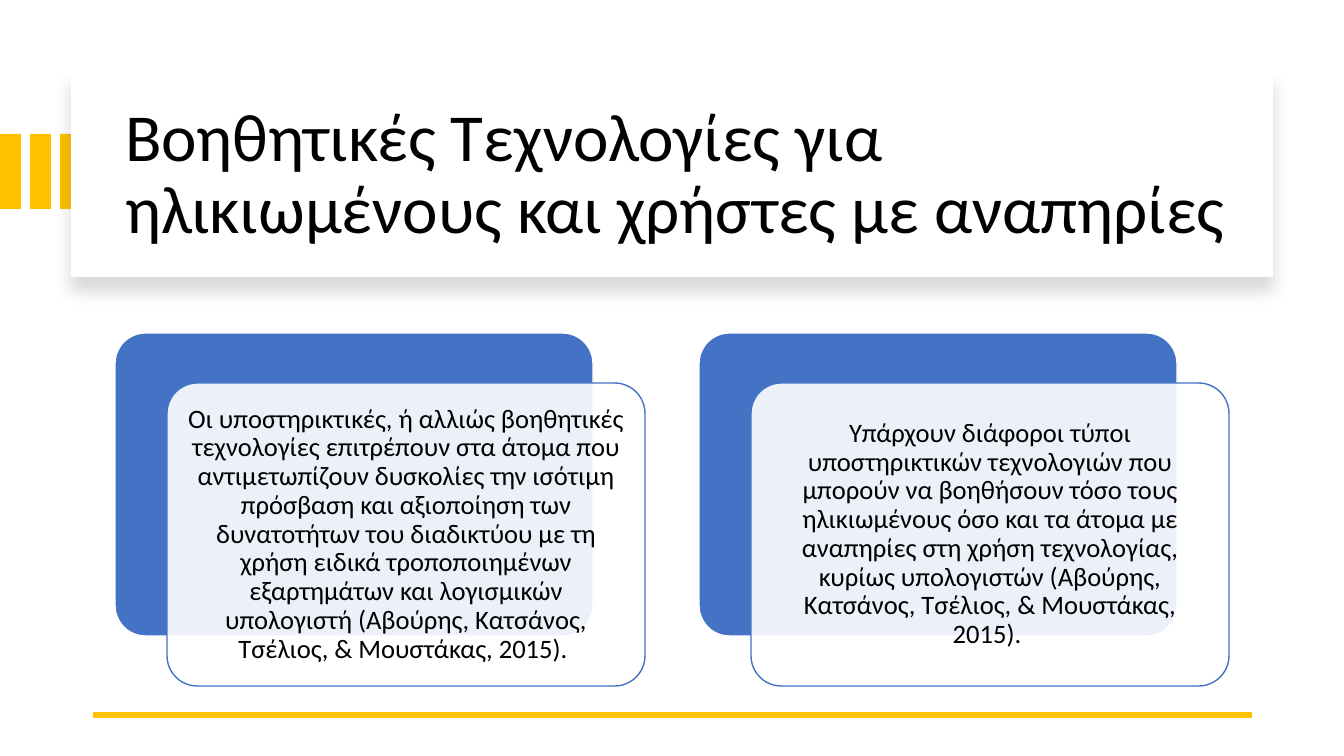
from lxml.etree import SubElement
from pptx import Presentation
from pptx.dml.color import RGBColor
from pptx.enum.shapes import MSO_CONNECTOR, MSO_SHAPE
from pptx.enum.text import MSO_ANCHOR, PP_ALIGN
from pptx.oxml.ns import qn
from pptx.util import Pt

PX = 914400 / 100.8
GOLD = RGBColor(0xFF, 0xC0, 0x00)
BLUE = RGBColor(0x44, 0x72, 0xC4)
WHITE = RGBColor(0xFF, 0xFF, 0xFF)
BLACK = RGBColor(0x00, 0x00, 0x00)

TITLE = "Βοηθητικές Τεχνολογίες για ηλικιωμένους και χρήστες με αναπηρίες"
CARD_TEXTS = [
    "Οι υποστηρικτικές, ή αλλιώς βοηθητικές τεχνολογίες επιτρέπουν στα άτομα που "
    "αντιμετωπίζουν δυσκολίες την ισότιμη πρόσβαση και αξιοποίηση των δυνατοτήτων "
    "του διαδικτύου με τη χρήση ειδικά τροποποιημένων εξαρτημάτων και λογισμικών "
    "υπολογιστή (Αβούρης, Κατσάνος, Τσέλιος, & Μουστάκας, 2015). ",
    "Υπάρχουν διάφοροι τύποι υποστηρικτικών τεχνολογιών που μπορούν να βοηθήσουν "
    "τόσο τους ηλικιωμένους όσο και τα άτομα με αναπηρίες στη χρήση τεχνολογίας, "
    "κυρίως υπολογιστών (Αβούρης, Κατσάνος, Τσέλιος, & Μουστάκας, 2015). ",
]

deck = Presentation()
deck.slide_width, deck.slide_height = round(1344 * PX), round(756 * PX)
page = deck.slides.add_slide(deck.slide_layouts[6])


def add_block(kind, bounds, fill, outline=None):
    block = page.shapes.add_shape(kind, *[round(n * PX) for n in bounds])
    block.shadow.inherit = False
    block.fill.solid()
    block.fill.fore_color.rgb = fill
    if kind == MSO_SHAPE.ROUNDED_RECTANGLE:
        block.adjustments[0] = 0.1
    if outline is None:
        block.line.fill.background()
    else:
        block.line.color.rgb = outline
        block.line.width = Pt(1)
    return block


def add_text(bounds, text, size, align, inset_x, inset_y):
    box = page.shapes.add_textbox(*[round(n * PX) for n in bounds])
    frame = box.text_frame
    frame.word_wrap = True
    frame.vertical_anchor = MSO_ANCHOR.MIDDLE
    frame.margin_left = frame.margin_right = round(inset_x * PX)
    frame.margin_top = frame.margin_bottom = round(inset_y * PX)
    para = frame.paragraphs[0]
    para.alignment = align
    para.line_spacing = 0.9
    span = para.add_run()
    span.text = text
    span.font.name = "Calibri"
    span.font.size = Pt(size)
    span.font.color.rgb = BLACK


# Gold stripes at the left edge
for i in range(3):
    add_block(MSO_SHAPE.RECTANGLE, (i * 30, 134, 21, 75), GOLD)

# Title panel with a soft shadow below it
panel = add_block(MSO_SHAPE.RECTANGLE, (71, 68, 1202, 209), WHITE)
effects = panel._element.spPr.find(qn("a:effectLst"))
shadow = SubElement(effects, qn("a:outerShdw"), blurRad=str(Pt(11)),
                    dist=str(Pt(10)), dir="5400000", algn="t", rotWithShape="0")
shadow_color = SubElement(shadow, qn("a:srgbClr"), val=str(BLACK))
SubElement(shadow_color, qn("a:alpha"), val="15000")
add_text((115, 90, 1122, 171), TITLE, 48, PP_ALIGN.LEFT, 10, 5)

# Gold rule at the bottom
rule = page.shapes.add_connector(
    MSO_CONNECTOR.STRAIGHT, *[round(n * PX) for n in (1252, 715, 93, 715)])
rule.line.color.rgb = GOLD
rule.line.width = Pt(4.5)
SubElement(rule._element.spPr, qn("a:effectLst"))

# Two cards, each a translucent sheet over a blue block
for i, text in enumerate(CARD_TEXTS):
    left, top = 115 + i * 584, 333
    add_block(MSO_SHAPE.ROUNDED_RECTANGLE, (left, top, 478, 303), BLUE, WHITE)
    sheet = add_block(MSO_SHAPE.ROUNDED_RECTANGLE,
                      (left + 52, top + 50, 478, 303), WHITE, BLUE)
    sheet_color = sheet._element.spPr.find(qn("a:solidFill")).find(qn("a:srgbClr"))
    SubElement(sheet_color, qn("a:alpha"), val="90000")
    add_text((left + 61, top + 59, 460, 285), text, 19, PP_ALIGN.CENTER, 8, 8)

deck.save("out.pptx")
